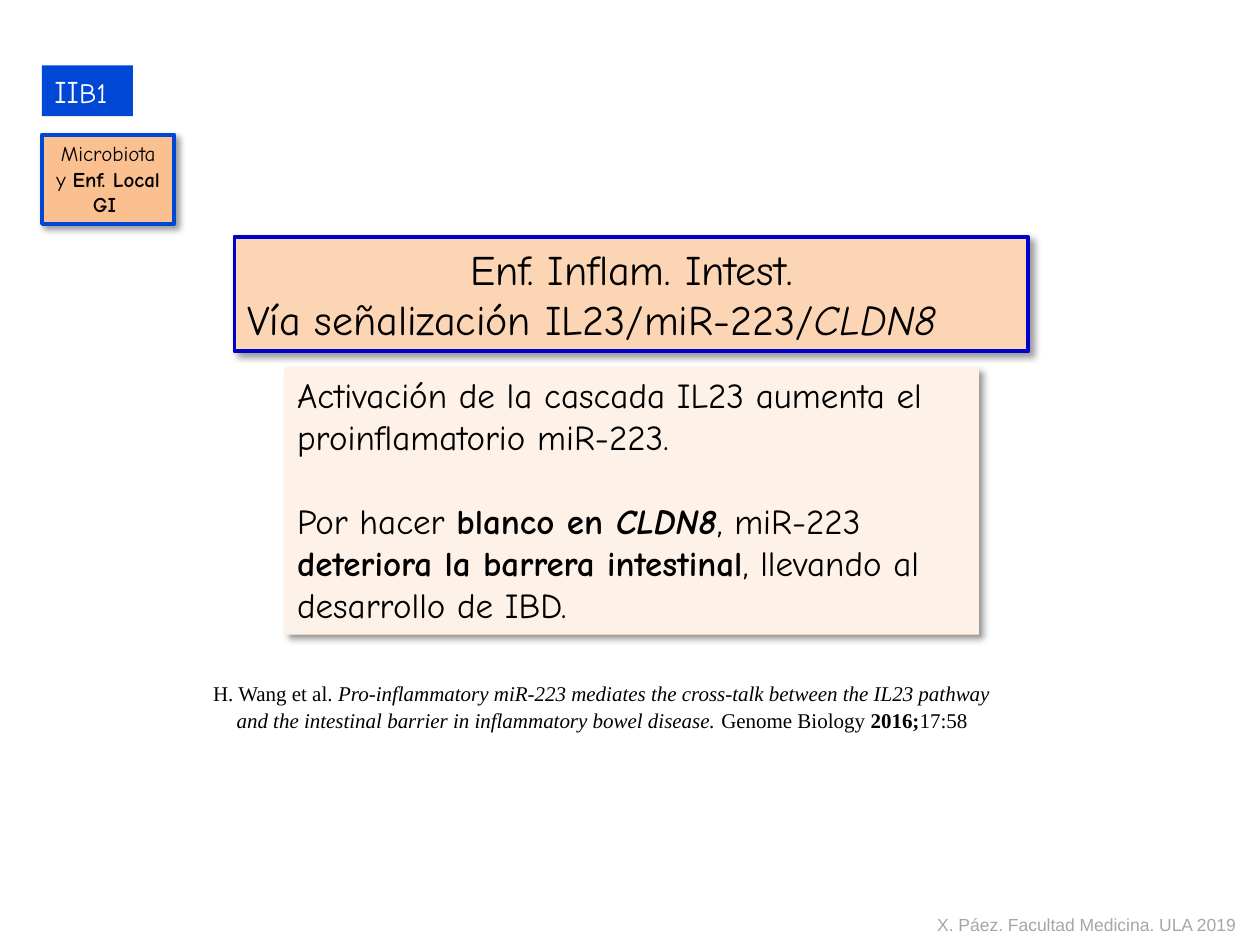
from lxml import etree
from pptx import Presentation
from pptx.dml.color import RGBColor
from pptx.enum import shapes, text
from pptx.oxml.ns import qn
from pptx.util import Pt

COLORS = {
    "black": "000000", "white": "FFFFFF", "gray": "A6A6A6",
    "blue": "0047D6", "navy": "0000CC",
    "orange": "FAC090", "peach": "FCD5B5", "cream": "FEF2E8",
}
LEFT, CENTER = text.PP_ALIGN.LEFT, text.PP_ALIGN.CENTER


def style_box(sp, fill, line=None, shadow=True):
    sp.fill.solid()
    sp.fill.fore_color.rgb = RGBColor.from_string(COLORS[fill])
    if line:
        sp.line.color.rgb = RGBColor.from_string(COLORS[line])
        sp.line.width = Pt(2.25)
    else:
        sp.line.fill.background()
    sp.shadow.inherit = False
    if shadow:
        effects = sp._element.spPr.find(qn("a:effectLst"))
        outer = etree.SubElement(effects, qn("a:outerShdw"), blurRad=str(Pt(4)),
                                 dist=str(Pt(3)), dir="2700000", algn="tl", rotWithShape="0")
        clr = etree.SubElement(outer, qn("a:srgbClr"), val=COLORS["black"])
        etree.SubElement(clr, qn("a:alpha"), val="40000")


def write(sp, paragraphs, size, font="Comic Neue", color="black", gap=0, spacing=1.0):
    """Fill a box with (alignment, runs); a run is (text, style letters b/i[, size])."""
    tf = sp.text_frame
    tf.word_wrap = True
    tf.auto_size = text.MSO_AUTO_SIZE.NONE
    tf.vertical_anchor = text.MSO_ANCHOR.TOP
    tf.margin_left = tf.margin_right = Pt(7.2)
    tf.margin_top = tf.margin_bottom = Pt(3.6)
    for i, (align, runs) in enumerate(paragraphs):
        p = tf.add_paragraph() if i else tf.paragraphs[0]
        p.alignment = align
        p.line_spacing = spacing
        p.space_before = Pt(gap if i else 0)
        for content, style, *own_size in runs:
            r = p.add_run()
            r.text = content
            r.font.name = font
            r.font.size = Pt(own_size[0] if own_size else size)
            r.font.bold = "b" in style
            r.font.italic = "i" in style
            r.font.color.rgb = RGBColor.from_string(COLORS[color])


prs = Presentation()
prs.slide_width, prs.slide_height = Pt(720), Pt(540)
s = prs.slides.add_slide(prs.slide_layouts[5])
RECT = shapes.MSO_SHAPE.RECTANGLE

# Title
title = s.shapes.title
title.left, title.top, title.width, title.height = Pt(134), Pt(135.3), Pt(453.6), Pt(65.5)
style_box(title, "peach", "navy")
write(title, [
    (CENTER, [("Enf. Inflam. Intest.", "")]),
    (LEFT, [("Vía señalización IL23/miR-223/", ""), ("CLDN8", "i")]),
], 24)

# Section code and topic
code = s.shapes.add_shape(RECT, Pt(24), Pt(37.4), Pt(52), Pt(29))
style_box(code, "blue", shadow=False)
write(code, [(LEFT, [("II", ""), ("B1", "", 16)])], 18, color="white")

topic = s.shapes.add_shape(RECT, Pt(24), Pt(77), Pt(75.6), Pt(51))
style_box(topic, "orange", "blue")
write(topic, [(CENTER, [("Microbiota y ", ""), ("Enf. Local GI ", "b")])], 12)

# Findings
findings = s.shapes.add_shape(RECT, Pt(162.7), Pt(210), Pt(396.7), Pt(152.7))
style_box(findings, "cream")
write(findings, [
    (LEFT, [("Activación de la cascada IL23 aumenta el proinflamatorio miR-223.", "")]),
    (LEFT, [("Por hacer ", ""), ("blanco en ", "b"), ("CLDN8", "bi"), (", miR-223 ", ""),
            ("deteriora la barrera intestinal", "b"),
            (", llevando al desarrollo de IBD.", "")]),
], 20, gap=24)

# Citation and footer
citation = s.shapes.add_textbox(Pt(105), Pt(384.5), Pt(478), Pt(38))
write(citation, [(CENTER, [
    ("H. Wang et al.", ""),
    (" Pro-inflammatory miR-223 mediates the cross-talk between the IL23 pathway "
     "and the intestinal barrier in inflammatory bowel disease. ", "i"),
    ("Genome Biology ", ""), ("2016;", "b"), ("17:58", ""),
])], 12, font="Times New Roman", spacing=1.07)

footer = s.shapes.add_textbox(Pt(528.5), Pt(519), Pt(191.5), Pt(19.4))
write(footer, [(LEFT, [("X. Páez. Facultad Medicina. ULA 2019", "")])],
      10, font="Arial", color="gray")

prs.save("out.pptx")
